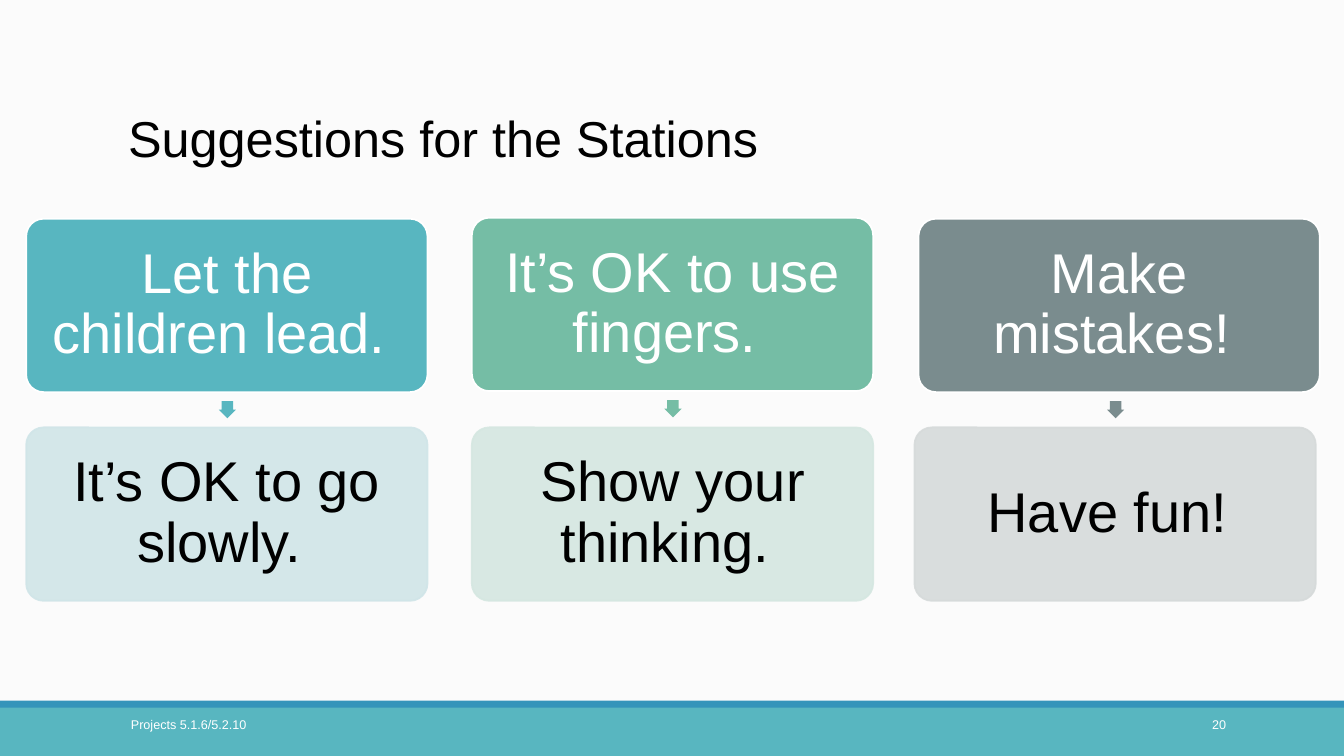
import pptx
import pptx.util
import pptx.dml.color
import pptx.enum.shapes
import pptx.enum.text
import pptx.oxml.ns
import lxml.etree

KIND = pptx.enum.shapes.MSO_SHAPE
ALIGN = pptx.enum.text.PP_ALIGN
ANCHOR = pptx.enum.text.MSO_ANCHOR
UNIT = 9144  # EMU in one px, at 100 px to the inch


def px(num):
    return pptx.util.Emu(num * UNIT)


def tint(code):
    return pptx.dml.color.RGBColor.from_string(code)


def fade(shape, part):
    """Make fill and line show only the given percentage."""
    for node in shape.element.spPr.findall(".//" + pptx.oxml.ns.qn("a:srgbClr")):
        lxml.etree.SubElement(node, pptx.oxml.ns.qn("a:alpha"), val=str(part * 1000))


class Page:
    font = "Arial"
    wide, high = 1333, 750

    def __init__(self, back):
        self.deck = pptx.Presentation()
        self.deck.slide_width = px(self.wide)
        self.deck.slide_height = px(self.high)
        self.slide = self.deck.slides.add_slide(self.deck.slide_layouts[5])
        self.slide.background.fill.solid()
        self.slide.background.fill.fore_color.rgb = tint(back)

    def label(self, shape, text, size, color, align, anchor, pad, lead=1.0):
        frame = shape.text_frame
        style = {
            "word_wrap": True, "vertical_anchor": anchor,
            "margin_left": px(pad[0]), "margin_right": px(pad[0]),
            "margin_top": px(pad[1]), "margin_bottom": px(pad[1]),
        }
        for name, value in style.items():
            setattr(frame, name, value)
        para = frame.paragraphs[0]
        para.alignment, para.line_spacing = align, lead
        run = para.add_run()
        run.text = text
        for name, value in {"name": self.font, "size": pptx.util.Pt(size)}.items():
            setattr(run.font, name, value)
        run.font.color.rgb = tint(color)

    def title(self, text, *box):
        shape = self.slide.shapes.title
        for name, value in zip(("left", "top", "width", "height"), box):
            setattr(shape, name, px(value))
        self.label(shape, text, 36, "000000", ALIGN.LEFT, ANCHOR.BOTTOM, (10, 5), 0.85)

    def note(self, text, align, *box):
        shape = self.slide.shapes.add_textbox(*map(px, box))
        self.label(shape, text, 9, "FFFFFF", align, ANCHOR.TOP, (10, 5))

    def shape(self, kind, fill, *box):
        shape = self.slide.shapes.add_shape(kind, *map(px, box))
        shape.shadow.inherit = False
        shape.fill.solid()
        shape.fill.fore_color.rgb = tint(fill)
        shape.line.fill.background()
        return shape

    def card(self, text, fill, edge, color, left, top, clear=100):
        shape = self.shape(KIND.ROUNDED_RECTANGLE, fill, left, top, 398, 172)
        shape.adjustments[0] = 0.1
        shape.line.color.rgb = tint(edge)
        shape.line.width = pptx.util.Pt(1.25)
        if clear < 100:
            fade(shape, clear)
        self.label(shape, text, 40, color, ALIGN.CENTER, ANCHOR.MIDDLE, (6, 6), 0.9)

    def arrow(self, fill, left, top):
        shape = self.shape(KIND.DOWN_ARROW, fill, left, top, 17, 17)
        shape.adjustments[0] = 0.67
        shape.adjustments[1] = 0.5


def main():
    page = Page("FBFBFB")
    page.shape(KIND.RECTANGLE, "58B6C0", 0, 700, page.wide, 50)
    page.shape(KIND.RECTANGLE, "3494BA", 0, 695, page.wide, 7)
    page.title("Suggestions for the Stations", 117, 12, 1100, 159)
    page.note("Projects 5.1.6/5.2.10", ALIGN.LEFT, 120, 706, 270, 40)
    page.note("20", ALIGN.RIGHT, 1083, 706, 143, 40)

    # head text, head fill, head left and top, base text, base fill, base left
    pairs = [
        ("Let the children lead. ", "58B6C0", 26, 217,
         "It’s OK to go slowly. ", "D0E5E8", 26),
        ("It’s OK to use fingers. ", "75BDA5", 468, 216,
         "Show your thinking. ", "D5E7E1", 468),
        ("Make mistakes! ", "7A8C8E", 911, 217,
         "Have fun! ", "D6DADA", 907),
    ]
    for head, dark, left, top, base, pale, low in pairs:
        page.card(head, dark, "FFFFFF", "FFFFFF", left, top)
        page.arrow(dark, low + 191, top + 181)
        page.card(base, pale, pale, "000000", low, 424, 90)

    page.deck.save("out.pptx")


if __name__ == "__main__":
    main()
